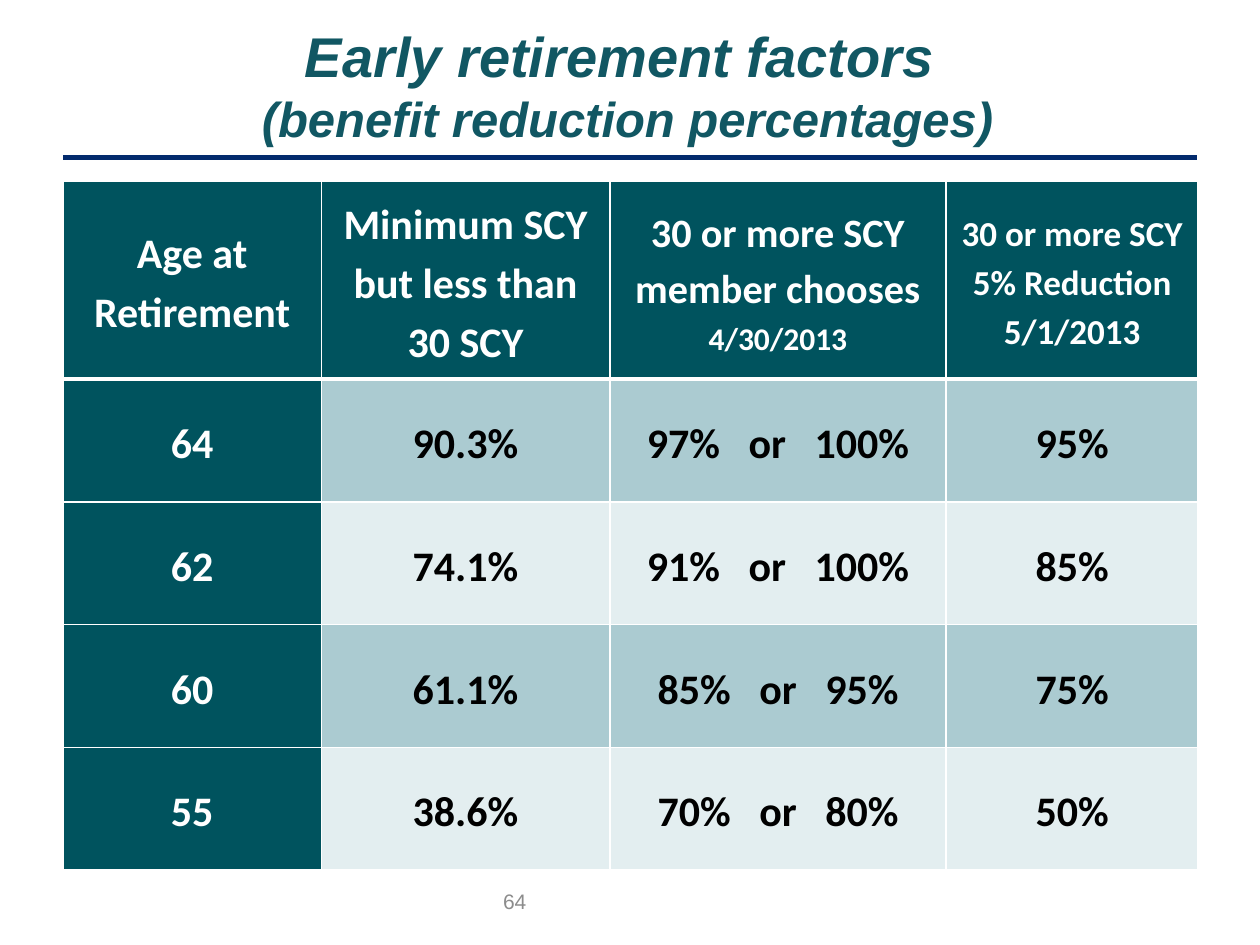
"""Build the early retirement factors slide."""
import lxml.etree
import pptx
import pptx.dml.color
import pptx.enum.shapes
import pptx.enum.text
import pptx.oxml.ns
import pptx.util

RGB = pptx.dml.color.RGBColor
TITLE = RGB(0x11, 0x57, 0x63)
RULE = RGB(0x03, 0x2B, 0x6D)
DARK = RGB(0x00, 0x53, 0x5E)
BANDS = [RGB(0xAB, 0xCB, 0xD1), RGB(0xE3, 0xEE, 0xF0)]
WHITE = RGB(0xFF, 0xFF, 0xFF)
BLACK = RGB(0x00, 0x00, 0x00)
GREY = RGB(0x8C, 0x8C, 0x8C)
CENTER = pptx.enum.text.PP_ALIGN.CENTER
MIDDLE = pptx.enum.text.MSO_ANCHOR.MIDDLE
qn = pptx.oxml.ns.qn


def add_run(p, text, size, color, font="Calibri", bold=True, italic=False):
    r = p.add_run()
    r.text = text
    r.font.size = pptx.util.Pt(size)
    r.font.name = font
    r.font.bold = bold
    r.font.italic = italic
    r.font.color.rgb = color
    return r


def add_border(cell, side, width):
    ln = lxml.etree.SubElement(cell._tc.get_or_add_tcPr(), qn("a:ln" + side), w=str(pptx.util.Pt(width)))
    fill = lxml.etree.SubElement(ln, qn("a:solidFill"))
    lxml.etree.SubElement(fill, qn("a:srgbClr"), val=str(WHITE))


prs = pptx.Presentation()
prs.slide_width = W = pptx.util.Inches(10)
prs.slide_height = H = pptx.util.Inches(7.5)
s = prs.slides.add_slide(prs.slide_layouts[6])
left, right = W // 20, W * 19 // 20

sp = s.shapes.add_connector(pptx.enum.shapes.MSO_CONNECTOR.STRAIGHT, left, H // 6, right, H // 6)
sp.line.color.rgb = RULE
sp.line.width = pptx.util.Pt(3)
lxml.etree.SubElement(sp._element.spPr, qn("a:effectLst"))

sp = s.shapes.add_textbox(int(W * -0.002), int(H * 0.023), W, int(H * 0.09))
tf = sp.text_frame
tf.word_wrap = True
tf.margin_left = tf.margin_right = tf.margin_top = tf.margin_bottom = 0
p = tf.paragraphs[0]
p.alignment = CENTER
add_run(p, "Early retirement factors ", 32, TITLE, "Arial", italic=True)
p.add_line_break()
add_run(p, "(benefit reduction percentages)", 28, TITLE, "Arial", italic=True)

sp = s.shapes.add_textbox(int(W * 0.292), int(H * 0.927), int(W * 0.233), int(H * 0.053))
tf = sp.text_frame
tf.word_wrap = True
tf.vertical_anchor = MIDDLE
p = tf.paragraphs[0]
p.alignment = CENTER
add_run(p, "64", 12, GREY, "Arial", bold=False)

rows = [
    [[("Age at Retirement", 24)],
     [("Minimum SCY but less than 30 SCY", 24)],
     [("30 or more SCY member chooses", 23), ("4/30/2013", 18)],
     [("30 or more SCY 5% Reduction", 20), ("5/1/2013", 20)]],
]
for values in [
    ("64", "90.3%", "97% or 100%", "95%"),
    ("62", "74.1%", "91% or 100%", "85%"),
    ("60", "61.1%", "85% or 95%", "75%"),
    ("55", "38.6%", "70% or 80%", "50%"),
]:
    rows.append([[(value, 24)] for value in values])

head_h, body_h = int(H * 0.209), int(H * 0.13)
sp = s.shapes.add_table(len(rows), 4, left, int(H * 0.192), right - left, head_h + 4 * body_h)
tbl = sp.table
for col, share in zip(tbl.columns, (0.205, 0.229, 0.267, 0.2)):
    col.width = int(W * share)

for i, row in enumerate(rows):
    tbl.rows[i].height = body_h if i else head_h
    for j, lines in enumerate(row):
        cell = tbl.cell(i, j)
        dark = i == 0 or j == 0
        cell.vertical_anchor = MIDDLE
        cell.margin_left = cell.margin_right = pptx.util.Inches(0.07)
        cell.margin_top = cell.margin_bottom = 0
        for side, width in zip("LRTB", (1, 1, 3 if i == 1 else 1, 3 if i == 0 else 1)):
            add_border(cell, side, width)
        cell.fill.solid()
        cell.fill.fore_color.rgb = DARK if dark else BANDS[(i - 1) % 2]
        tf = cell.text_frame
        for k, (text, size) in enumerate(lines):
            p = tf.add_paragraph() if k else tf.paragraphs[0]
            p.alignment = CENTER
            p.line_spacing = 1.15
            color = WHITE if dark else BLACK
            if " or " in text and not dark:
                for n, word in enumerate(text.split()):
                    if n:
                        r = add_run(p, " ", size, color)
                        r._r.get_or_add_rPr().set("spc", "1090")
                    add_run(p, word, size, color)
            else:
                add_run(p, text, size, color)

prs.save("out.pptx")
